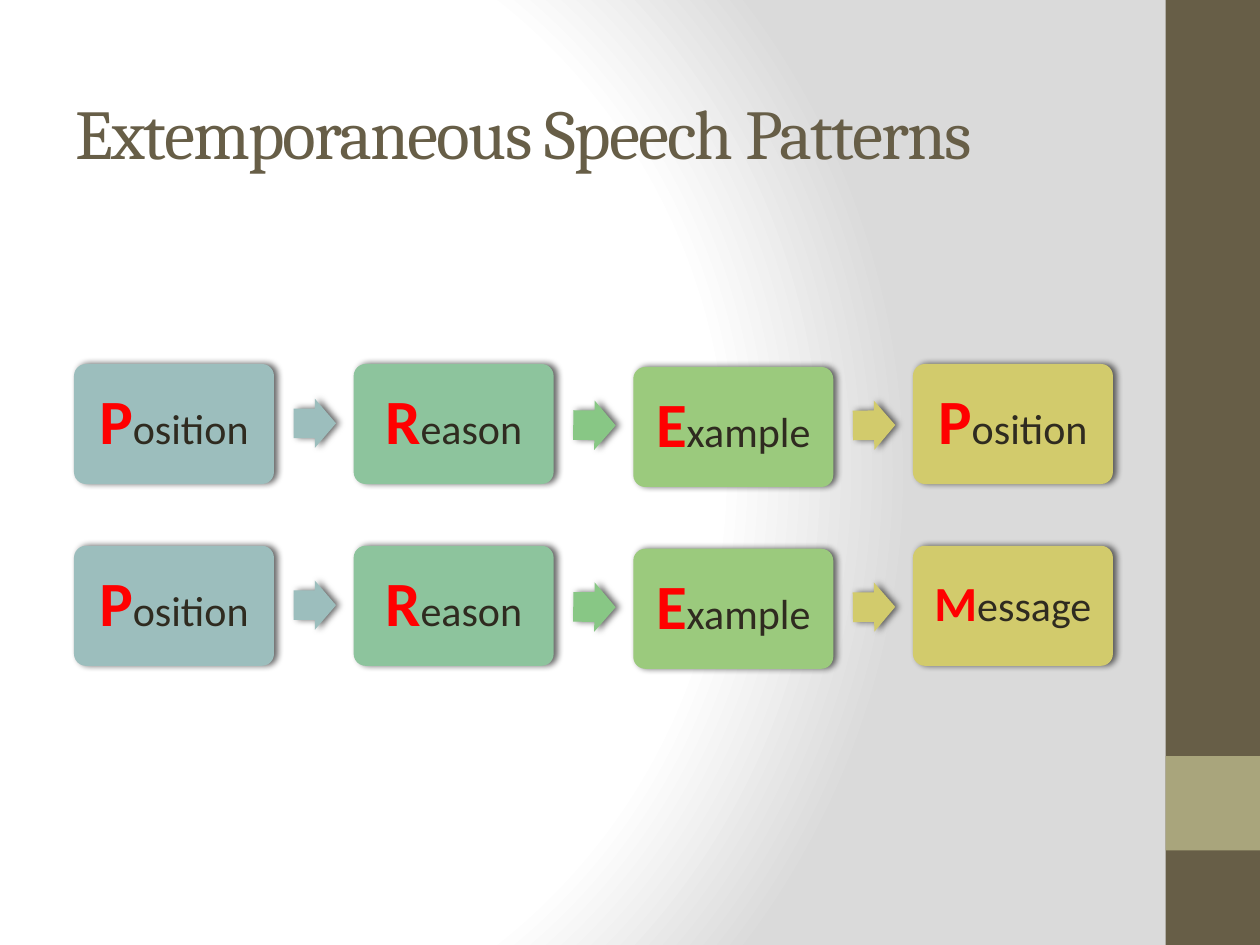
from pptx import Presentation
from pptx.dml.color import RGBColor
from pptx.enum.shapes import MSO_SHAPE
from pptx.enum.text import MSO_ANCHOR, PP_ALIGN
from pptx.oxml import parse_xml
from pptx.oxml.ns import nsdecls
from pptx.util import Pt

LEFT, TOP, STEP, ROW_STEP = 42.3, 208, 159.8, 103.9
BOX_W, BOX_H, ARROW_W, ARROW_H = 114.3, 68.6, 24.2, 28.2
BOX_COLORS = ["9CBEBD", "8DC49D", "9BCA7D", "D2CB6C"]
BOX_DROPS = [0, 0, 1.7, 0]
ARROWS = [("9CBEBD", 0, 0), ("88C785", 1.1, 0.6), ("D2CB6C", 1.1, 359.4)]
ROWS = [
    [("Position", 36), ("Reason", 36), ("Example", 36), ("Position", 36)],
    [("Position", 36), ("Reason", 36), ("Example", 36), ("Message", 28)],
]


def rgb(value):
    """Turn a hex string into a colour."""
    return RGBColor.from_string(value)


def set_background(s):
    """Fill the slide with a radial white to grey gradient."""
    stops = "".join(
        f'<a:gs pos="{pos}000"><a:srgbClr val="{color}"/></a:gs>'
        for pos, color in [(0, "FFFFFF"), (75, "FFFFFF"), (100, "DADADA")])
    bg = parse_xml(
        f'<p:bg {nsdecls("p", "a")}><p:bgPr><a:gradFill><a:gsLst>{stops}</a:gsLst>'
        '<a:path path="circle"><a:fillToRect l="20000" t="50000" r="100000" b="50000"/>'
        '</a:path></a:gradFill><a:effectLst/></p:bgPr></p:bg>')
    s.element.cSld.insert(0, bg)


def add_shape(shapes, kind, x, y, w, h, color):
    """Add a flat shape without outline."""
    sp = shapes.add_shape(kind, Pt(x), Pt(y), Pt(w), Pt(h))
    sp.shadow.inherit = False
    sp.fill.solid()
    sp.fill.fore_color.rgb = rgb(color)
    sp.line.fill.background()
    return sp


def add_shadow(sp):
    """Give a shape a soft shadow to the right."""
    effects = sp.element.spPr.find("{*}effectLst")
    effects.append(parse_xml(
        f'<a:outerShdw {nsdecls("a")} blurRad="{Pt(4)}" dist="{Pt(2)}" dir="0" '
        'rotWithShape="0"><a:srgbClr val="000000"><a:alpha val="60000"/>'
        '</a:srgbClr></a:outerShdw>'))


def format_run(r, font, size, color, bold=False):
    """Set the font of a run."""
    r.font.name, r.font.size, r.font.bold = font, Pt(size), bold
    r.font.color.rgb = rgb(color)


def add_title(s, text):
    """Place and format the title."""
    sp = s.shapes.title
    sp.left, sp.top, sp.width, sp.height = Pt(36), Pt(30.2), Pt(600), Pt(90)
    tf = sp.text_frame
    tf.text = text
    tf.vertical_anchor = MSO_ANCHOR.MIDDLE
    p = tf.paragraphs[0]
    p.alignment = PP_ALIGN.LEFT
    r = p.runs[0]
    format_run(r, "Cambria", 40, "675E47")
    r.font._element.set("spc", "-100")


def add_box(shapes, x, y, color, word, initial_size):
    """Add a rounded box whose word has a red initial."""
    sp = add_shape(shapes, MSO_SHAPE.ROUNDED_RECTANGLE, x, y, BOX_W, BOX_H, color)
    sp.adjustments[0] = 0.1
    add_shadow(sp)
    tf = sp.text_frame
    tf.word_wrap = True
    tf.vertical_anchor = MSO_ANCHOR.MIDDLE
    inset = Pt(initial_size * 0.3)
    tf.margin_left = tf.margin_right = tf.margin_top = tf.margin_bottom = inset
    p = tf.paragraphs[0]
    p.alignment = PP_ALIGN.CENTER
    p.line_spacing = 0.9
    for text, size, color, bold in [(word[0], initial_size, "FF0000", True),
                                    (word[1:], 24, "2F2B20", False)]:
        r = p.add_run()
        r.text = text
        format_run(r, "Calibri", size, color, bold)


def add_arrow(shapes, x, y, color, rotation):
    """Add a block arrow between two boxes."""
    sp = add_shape(shapes, MSO_SHAPE.RIGHT_ARROW, x, y, ARROW_W, ARROW_H, color)
    sp.adjustments[0] = 0.6
    sp.rotation = rotation
    add_shadow(sp)


def add_pattern(s, y, words):
    """Add one row of boxes joined by arrows."""
    shapes = s.shapes.add_group_shape().shapes
    for i, (word, size) in enumerate(words):
        add_box(shapes, LEFT + i * STEP, y + BOX_DROPS[i], BOX_COLORS[i], word, size)
    for i, (color, drop, rotation) in enumerate(ARROWS):
        add_arrow(shapes, LEFT + 125.5 + i * STEP, y + 19.8 + drop, color, rotation)


def main():
    """Build the slide."""
    prs = Presentation()
    prs.slide_width, prs.slide_height = Pt(720), Pt(540)
    s = prs.slides.add_slide(prs.slide_layouts[5])
    set_background(s)
    add_shape(s.shapes, MSO_SHAPE.RECTANGLE, 666, 0, 54, 540, "675E47")
    add_shape(s.shapes, MSO_SHAPE.RECTANGLE, 666, 432, 54, 54, "A9A57C")
    add_title(s, "Extemporaneous Speech Patterns")
    for i, words in enumerate(ROWS):
        add_pattern(s, TOP + i * ROW_STEP, words)
    prs.save("out.pptx")


if __name__ == "__main__":
    main()
